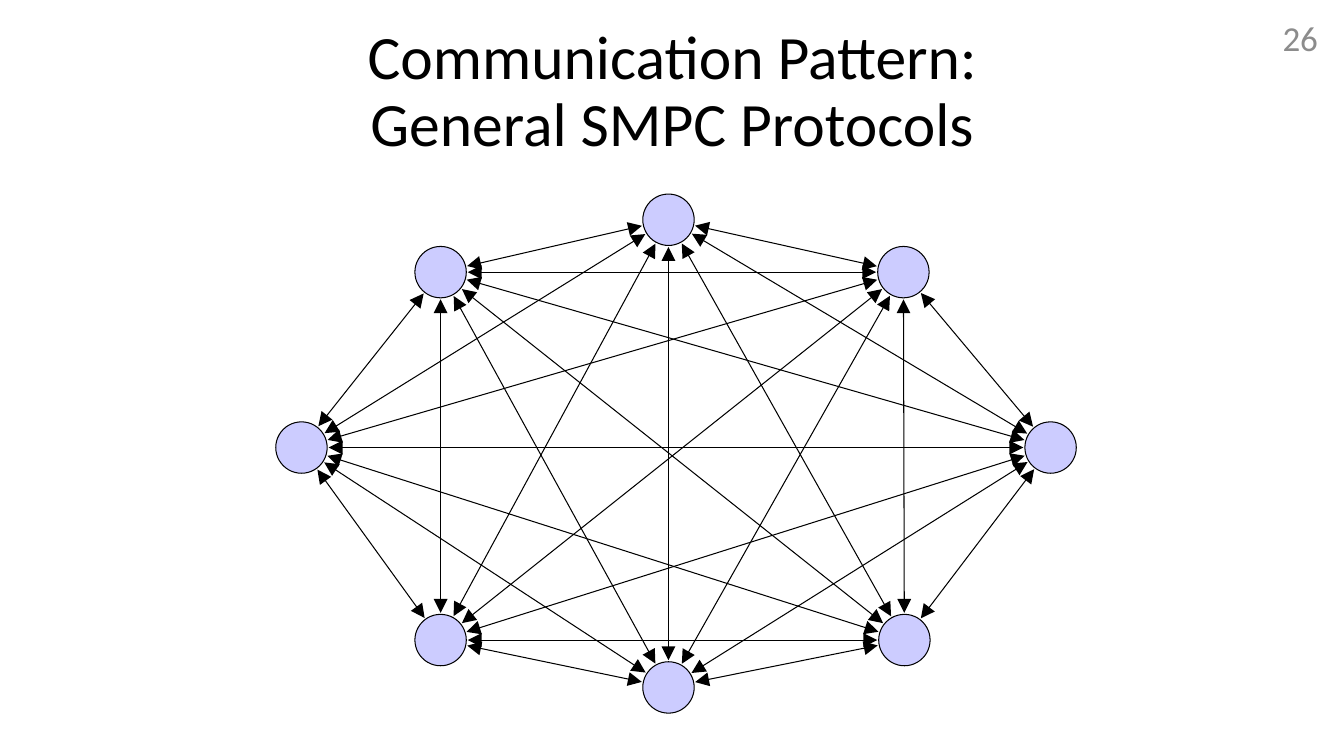
import itertools
import math

import pptx
import pptx.dml.color
import pptx.enum.shapes
import pptx.enum.text
import pptx.oxml.ns
import pptx.util
from lxml import etree
from pptx.util import Inches

DIAMETER = 0.51
ARROW_GAP = 0.27
CENTRES = {
    "west": (2.99, 4.44),
    "north_west": (4.37, 2.7),
    "north": (6.63, 2.18),
    "north_east": (8.96, 2.7),
    "east": (10.42, 4.44),
    "south_east": (8.97, 6.35),
    "south": (6.63, 6.82),
    "south_west": (4.37, 6.35),
}


def rgb(value):
    """Return the colour for a hex string."""
    return pptx.dml.color.RGBColor.from_string(value)


def apply(obj, formats):
    """Set each attribute named in a dict of format values."""
    for name, value in formats.items():
        setattr(obj, name, value)


def write(sp, text, size, color, frame, para):
    """Fill a shape with one formatted paragraph."""
    tf = sp.text_frame
    apply(tf, frame)
    p = tf.paragraphs[0]
    p.text = text
    apply(p, para)
    for r in p.runs:
        apply(r.font, {"name": "Calibri", "size": pptx.util.Pt(size)})
        r.font.color.rgb = rgb(color)


def add_title(slide, text):
    """Place and format the slide title."""
    sp = slide.shapes.title
    apply(sp, {"left": Inches(1.92), "top": Inches(0.3),
               "width": Inches(9.5), "height": Inches(1.25)})
    frame = dict.fromkeys(
        ("margin_left", "margin_top", "margin_right", "margin_bottom"), 0)
    frame.update(word_wrap=True, auto_size=pptx.enum.text.MSO_AUTO_SIZE.NONE,
                 vertical_anchor=pptx.enum.text.MSO_ANCHOR.MIDDLE)
    write(sp, text, 44, "000000", frame,
          {"alignment": pptx.enum.text.PP_ALIGN.CENTER, "line_spacing": 0.9})


def add_page_number(slide, text):
    """Add the page number at the top right."""
    sp = slide.shapes.add_textbox(
        Inches(10.17), Inches(0.17), Inches(3), Inches(0.4))
    write(sp, text, 25, "8C8C8C",
          {"word_wrap": True,
           "vertical_anchor": pptx.enum.text.MSO_ANCHOR.MIDDLE},
          {"alignment": pptx.enum.text.PP_ALIGN.RIGHT})


def format_line(line):
    """Give a line the thin black stroke."""
    line.color.rgb = rgb("000000")
    line.width = pptx.util.Pt(0.75)


def add_party(slide, centre):
    """Add the circle of one party around its centre."""
    x, y = centre
    sp = slide.shapes.add_shape(
        pptx.enum.shapes.MSO_SHAPE.OVAL,
        Inches(x - DIAMETER / 2), Inches(y - DIAMETER / 2),
        Inches(DIAMETER), Inches(DIAMETER))
    sp.shadow.inherit = False
    sp.fill.solid()
    sp.fill.fore_color.rgb = rgb("CCCCFF")
    format_line(sp.line)


def add_channel(slide, start, end):
    """Add a two-way arrow between the rims of two parties."""
    (x1, y1), (x2, y2) = start, end
    ratio = ARROW_GAP / math.dist(start, end)
    dx, dy = (x2 - x1) * ratio, (y2 - y1) * ratio
    cxn = slide.shapes.add_connector(
        pptx.enum.shapes.MSO_CONNECTOR.STRAIGHT,
        Inches(x1 + dx), Inches(y1 + dy), Inches(x2 - dx), Inches(y2 - dy))
    format_line(cxn.line)
    qn = pptx.oxml.ns.qn
    sp_pr = cxn._element.spPr
    ln = sp_pr.find(qn("a:ln"))
    for tag in ("a:headEnd", "a:tailEnd"):
        etree.SubElement(ln, qn(tag), type="triangle", w="lg", len="lg")
    etree.SubElement(sp_pr, qn("a:effectLst"))


def main():
    """Build the slide and save it."""
    prs = pptx.Presentation()
    prs.slide_width, prs.slide_height = Inches(13.33), Inches(7.5)
    slide = prs.slides.add_slide(prs.slide_layouts[5])
    add_title(slide, "Communication Pattern:\vGeneral SMPC Protocols")
    for centre in CENTRES.values():
        add_party(slide, centre)
    for start, end in itertools.combinations(CENTRES.values(), 2):
        add_channel(slide, start, end)
    add_page_number(slide, "26")
    prs.save("out.pptx")


if __name__ == "__main__":
    main()
